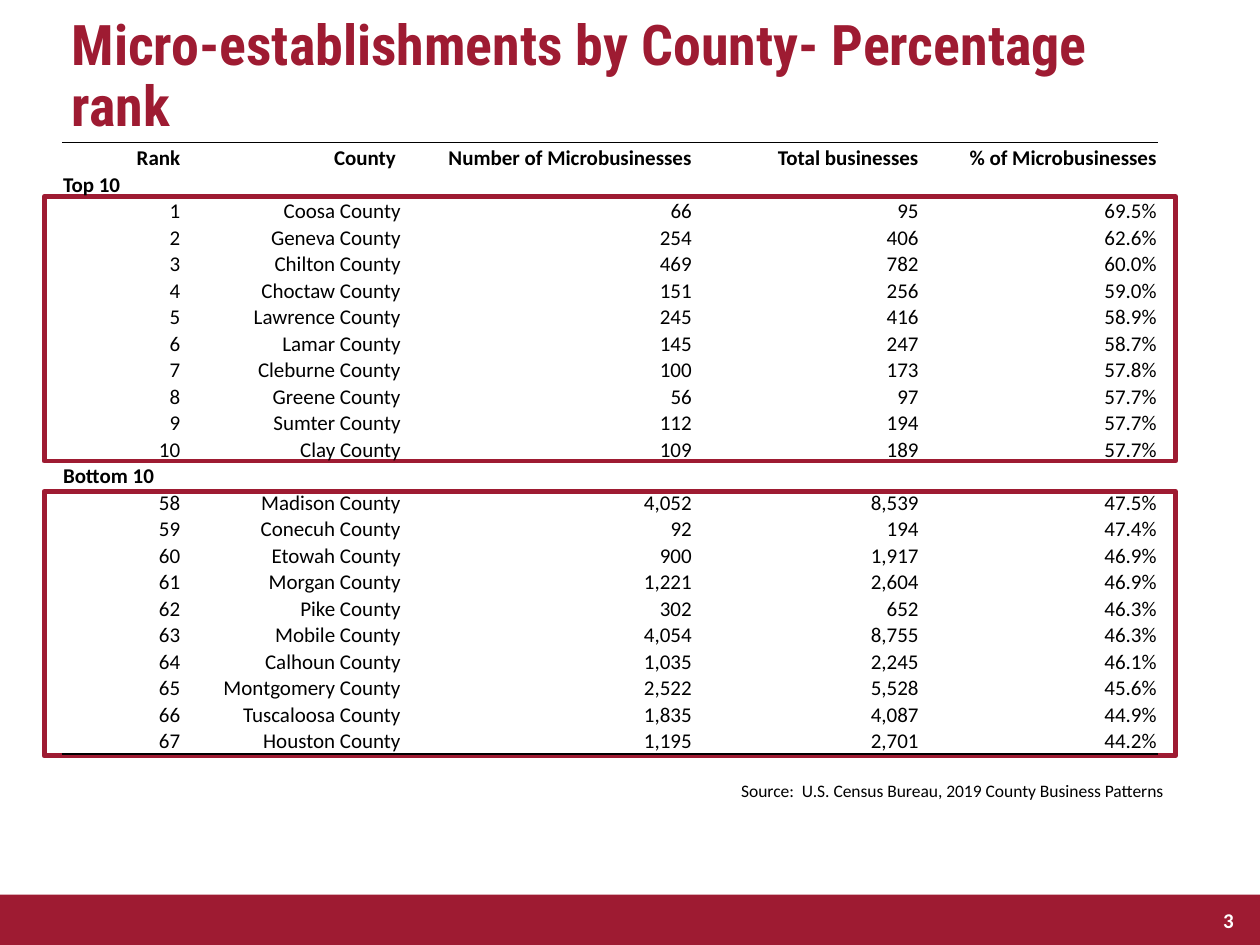
from lxml import etree
from pptx import Presentation
from pptx.dml.color import RGBColor
from pptx.enum.shapes import MSO_SHAPE
from pptx.enum.text import MSO_ANCHOR, PP_ALIGN
from pptx.oxml.ns import qn
from pptx.util import Inches, Pt

CRIMSON = RGBColor(0x9E, 0x1B, 0x32)
WHITE = RGBColor(0xFF, 0xFF, 0xFF)
BLACK = RGBColor(0, 0, 0)

NO_STYLE = "{2D5ABB26-0587-4C30-8999-92F81FD0307C}"
COL_WIDTHS = [0.95, 1.75, 2.31, 1.8, 1.89]
HEADER = ["Rank", "County ", "Number of Microbusinesses",
          "Total businesses", "% of Microbusinesses"]
TOP = [
    ("1", "Coosa", "66", "95", "69.5%"),
    ("2", "Geneva", "254", "406", "62.6%"),
    ("3", "Chilton", "469", "782", "60.0%"),
    ("4", "Choctaw", "151", "256", "59.0%"),
    ("5", "Lawrence", "245", "416", "58.9%"),
    ("6", "Lamar", "145", "247", "58.7%"),
    ("7", "Cleburne", "100", "173", "57.8%"),
    ("8", "Greene", "56", "97", "57.7%"),
    ("9", "Sumter", "112", "194", "57.7%"),
    ("10", "Clay", "109", "189", "57.7%"),
]
BOTTOM = [
    ("58", "Madison", "4,052", "8,539", "47.5%"),
    ("59", "Conecuh", "92", "194", "47.4%"),
    ("60", "Etowah", "900", "1,917", "46.9%"),
    ("61", "Morgan", "1,221", "2,604", "46.9%"),
    ("62", "Pike", "302", "652", "46.3%"),
    ("63", "Mobile", "4,054", "8,755", "46.3%"),
    ("64", "Calhoun", "1,035", "2,245", "46.1%"),
    ("65", "Montgomery", "2,522", "5,528", "45.6%"),
    ("66", "Tuscaloosa", "1,835", "4,087", "44.9%"),
    ("67", "Houston", "1,195", "2,701", "44.2%"),
]


def write(p, text, color, align=PP_ALIGN.LEFT, **font):
    p.alignment = align
    r = p.add_run()
    r.text = text
    r.font.color.rgb = color
    for name, value in font.items():
        setattr(r.font, name, value)


def add_text(s, box, text, color, anchor=MSO_ANCHOR.TOP, spacing=None, **format):
    tf = s.shapes.add_textbox(*map(Inches, box)).text_frame
    tf.word_wrap = True
    tf.vertical_anchor = anchor
    p = tf.paragraphs[0]
    p.line_spacing = spacing
    write(p, text, color, **format)


def add_rect(s, box, fill, line=None, opacity=None):
    sp = s.shapes.add_shape(MSO_SHAPE.RECTANGLE, *map(Inches, box))
    sp.shadow.inherit = False
    sp.fill.solid()
    sp.fill.fore_color.rgb = fill
    if opacity is not None:
        clr = sp.fill._xPr.find(qn("a:solidFill"))[0]
        etree.SubElement(clr, qn("a:alpha"), val=str(opacity * 1000))
    if line is None:
        sp.line.fill.background()
    else:
        sp.line.color.rgb = line
        sp.line.width = Pt(2.75)


def add_footer(s, box):
    left, top, width, height = box
    add_rect(s, box, CRIMSON)
    add_text(s, (left + width - 0.54, top, 0.42, height), "3", WHITE,
             MSO_ANCHOR.MIDDLE, align=PP_ALIGN.RIGHT,
             size=Pt(12), name="Calibri", bold=True)


def add_border(cell, side):
    tcPr = cell._tc.get_or_add_tcPr()
    ln = etree.Element(qn("a:" + side), w=str(Pt(1)))
    fill = etree.SubElement(ln, qn("a:solidFill"))
    etree.SubElement(fill, qn("a:srgbClr"), val=str(BLACK))
    tcPr.insert(0, ln)


def fill_cell(cell, text, bold, align):
    margins = {"margin_left": 0.01, "margin_right": 0.01,
               "margin_top": 0.01, "margin_bottom": 0}
    for name, value in margins.items():
        setattr(cell, name, Inches(value))
    cell.vertical_anchor = MSO_ANCHOR.BOTTOM
    cell.fill.background()
    p = cell.text_frame.paragraphs[0]
    if text:
        write(p, text, BLACK, align, size=Pt(12), name="Calibri", bold=bold)
    else:
        # Keeps empty cells from stretching the row
        end = etree.SubElement(p._p, qn("a:endParaRPr"), sz="1200")
        etree.SubElement(end, qn("a:latin"), typeface="Calibri")


def add_county_table(s, box):
    def counties(group):
        return [(rank, f"{name} County", *rest) for rank, name, *rest in group]

    rows = [HEADER, ["Top 10"], *counties(TOP), ["Bottom 10"], *counties(BOTTOM)]
    table = s.shapes.add_table(len(rows), len(HEADER), *map(Inches, box)).table
    table.first_row = table.horz_banding = False
    table._tbl.tblPr.find(qn("a:tableStyleId")).text = NO_STYLE
    for column, width in zip(table.columns, COL_WIDTHS):
        column.width = Inches(width)
    for i, values in enumerate(rows):
        table.rows[i].height = Inches(0.23 if i == 0 else 0.21)
        section = len(values) == 1
        align = PP_ALIGN.LEFT if section else PP_ALIGN.RIGHT
        for j in range(len(HEADER)):
            text = values[j] if j < len(values) else ""
            fill_cell(table.cell(i, j), text, section or i == 0, align)
    for j in range(len(HEADER)):
        add_border(table.cell(0, j), "lnT")
        add_border(table.cell(len(rows) - 1, j), "lnB")


def main():
    prs = Presentation()
    prs.slide_width, prs.slide_height = Inches(10), Inches(7.5)
    s = prs.slides.add_slide(prs.slide_layouts[6])

    # Footer band and title
    add_footer(s, (0, 7.1, 10.01, 0.4))
    add_text(s, (0.47, 0.09, 8.39, 0.57),
             "Micro-establishments by County- Percentage rank", CRIMSON,
             spacing=0.9, size=Pt(32), name="Roboto Condensed", bold=True)

    # Frames behind the two groups of ten
    for top in (1.56, 3.9):
        add_rect(s, (0.35, top, 8.98, 2.1), WHITE, CRIMSON, opacity=18)

    # Ranking and its source
    add_county_table(s, (0.49, 1.13, 8.7, 4.88))
    add_text(s, (4.33, 6.14, 5, 0.27),
             "Source:  U.S. Census Bureau, 2019 County Business Patterns", BLACK,
             align=PP_ALIGN.RIGHT, size=Pt(10), name="Calibri")

    prs.save("out.pptx")


if __name__ == "__main__":
    main()
